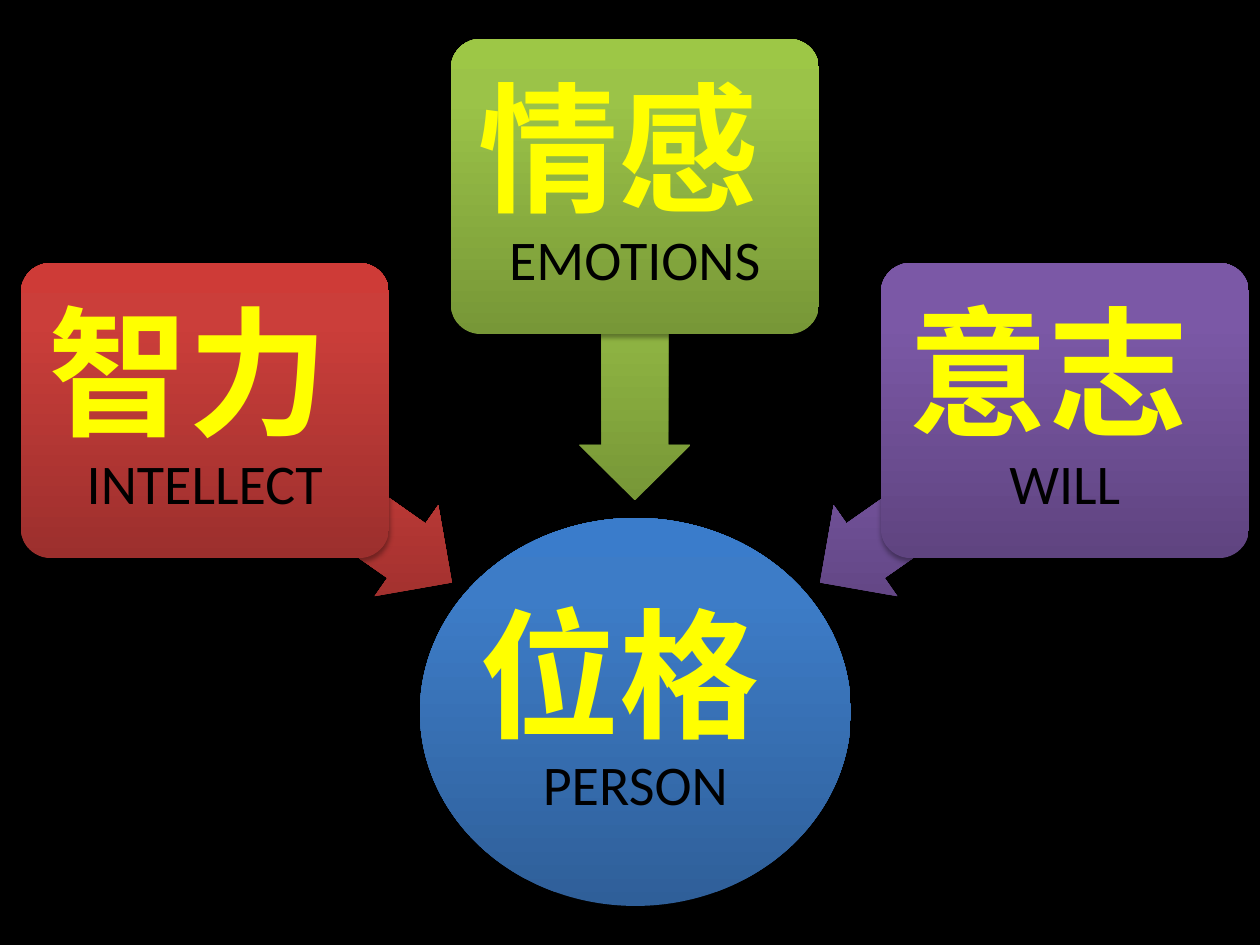
from dataclasses import dataclass

from pptx import Presentation
from pptx.dml.color import RGBColor
from pptx.enum.shapes import MSO_SHAPE
from pptx.enum.text import MSO_ANCHOR, PP_ALIGN
from pptx.oxml import parse_xml
from pptx.oxml.ns import nsdecls
from pptx.shapes.autoshape import Shape
from pptx.slide import Slide
from pptx.util import Emu, Pt

EMU_PER_PX = 914400 // 126
BLACK = RGBColor(0x00, 0x00, 0x00)
YELLOW = RGBColor(0xFF, 0xFF, 0x00)


@dataclass(frozen=True)
class Shades:
    dark: RGBColor
    middle: RGBColor
    light: RGBColor


@dataclass(frozen=True)
class Frame:
    left: int
    top: int
    width: int
    height: int


@dataclass(frozen=True)
class Faculty:
    chinese: str
    english: str
    shades: Shades
    card: Frame
    arrow: Frame
    rotation: int


BLUE = Shades(RGBColor(0x2F, 0x5F, 0x99), RGBColor(0x3D, 0x7C, 0xC7), RGBColor(0x3A, 0x7C, 0xCB))
RED = Shades(RGBColor(0x9C, 0x2F, 0x2D), RGBColor(0xCB, 0x3E, 0x3A), RGBColor(0xCE, 0x3B, 0x37))
GREEN = Shades(RGBColor(0x77, 0x97, 0x37), RGBColor(0x9B, 0xC3, 0x48), RGBColor(0x9D, 0xC7, 0x46))
PURPLE = Shades(RGBColor(0x5F, 0x44, 0x80), RGBColor(0x7B, 0x58, 0xA6), RGBColor(0x7C, 0x57, 0xA8))

PERSON_FRAME = Frame(420, 518, 431, 388)
CARD_LEFT, CARD_PITCH, CARD_WIDTH, CARD_HEIGHT = 21, 430, 368, 295
SIDE_TOP, MIDDLE_TOP = 263, 39


def card_frame(column: int, top: int) -> Frame:
    return Frame(CARD_LEFT + column * CARD_PITCH, top, CARD_WIDTH, CARD_HEIGHT)


FACULTIES = (
    Faculty("智力", "INTELLECT", RED, card_frame(0, SIDE_TOP), Frame(179, 441, 300, 111), 215),
    Faculty("情感", "EMOTIONS", GREEN, card_frame(1, MIDDLE_TOP), Frame(479, 289, 312, 111), 270),
    Faculty("意志", "WILL", PURPLE, card_frame(2, SIDE_TOP), Frame(793, 441, 300, 111), 325),
)


def px(length: int) -> Emu:
    return Emu(length * EMU_PER_PX)


def add_shaded_shape(page: Slide, kind: MSO_SHAPE, frame: Frame, shades: Shades) -> Shape:
    """Add a borderless shape with a vertical gradient and a soft shadow."""
    shape = page.shapes.add_shape(
        kind, px(frame.left), px(frame.top), px(frame.width), px(frame.height)
    )
    shape.line.fill.background()
    outline = shape.line._get_or_add_ln()
    stops = "".join(
        f'<a:gs pos="{position}"><a:srgbClr val="{color}"/></a:gs>'
        for position, color in ((0, shades.dark), (80000, shades.middle), (100000, shades.light))
    )
    outline.addprevious(parse_xml(
        f'<a:gradFill {nsdecls("a")} rotWithShape="0"><a:gsLst>{stops}</a:gsLst>'
        '<a:lin ang="16200000" scaled="0"/></a:gradFill>'
    ))
    outline.addnext(parse_xml(
        f'<a:effectLst {nsdecls("a")}><a:outerShdw blurRad="{Pt(3.1)}" dist="{Pt(1.8)}" '
        f'dir="5400000" rotWithShape="0"><a:srgbClr val="{BLACK}"><a:alpha val="35000"/>'
        "</a:srgbClr></a:outerShdw></a:effectLst>"
    ))
    return shape


def write_label(shape: Shape, chinese: str, english: str) -> None:
    box = shape.text_frame
    box.word_wrap = False
    box.vertical_anchor = MSO_ANCHOR.MIDDLE
    box.margin_left = box.margin_right = box.margin_top = box.margin_bottom = 0
    para = box.paragraphs[0]
    para.alignment = PP_ALIGN.CENTER
    para.line_spacing = 0.9
    para.font.name = "Calibri"
    for text, size, color, bold in (
        (f"{chinese} ", 80, YELLOW, True),
        (english, 32, BLACK, False),
    ):
        if para.runs:
            para.add_line_break()
        span = para.add_run()
        span.text = text
        span.font.size = Pt(size)
        span.font.bold = bold
        span.font.color.rgb = color


def add_faculty(page: Slide, faculty: Faculty) -> None:
    arrow = add_shaded_shape(page, MSO_SHAPE.LEFT_ARROW, faculty.arrow, faculty.shades)
    arrow.adjustments[0] = 0.6
    arrow.adjustments[1] = 0.5
    arrow.rotation = faculty.rotation
    card = add_shaded_shape(page, MSO_SHAPE.ROUNDED_RECTANGLE, faculty.card, faculty.shades)
    card.adjustments[0] = 0.1
    write_label(card, faculty.chinese, faculty.english)


def main() -> None:
    deck = Presentation()
    deck.slide_width, deck.slide_height = px(1260), px(945)
    page = deck.slides.add_slide(deck.slide_layouts[6])
    page.background.fill.solid()
    page.background.fill.fore_color.rgb = BLACK
    person = add_shaded_shape(page, MSO_SHAPE.OVAL, PERSON_FRAME, BLUE)
    write_label(person, "位格", "PERSON")
    for faculty in FACULTIES:
        add_faculty(page, faculty)
    deck.save("out.pptx")


if __name__ == "__main__":
    main()
